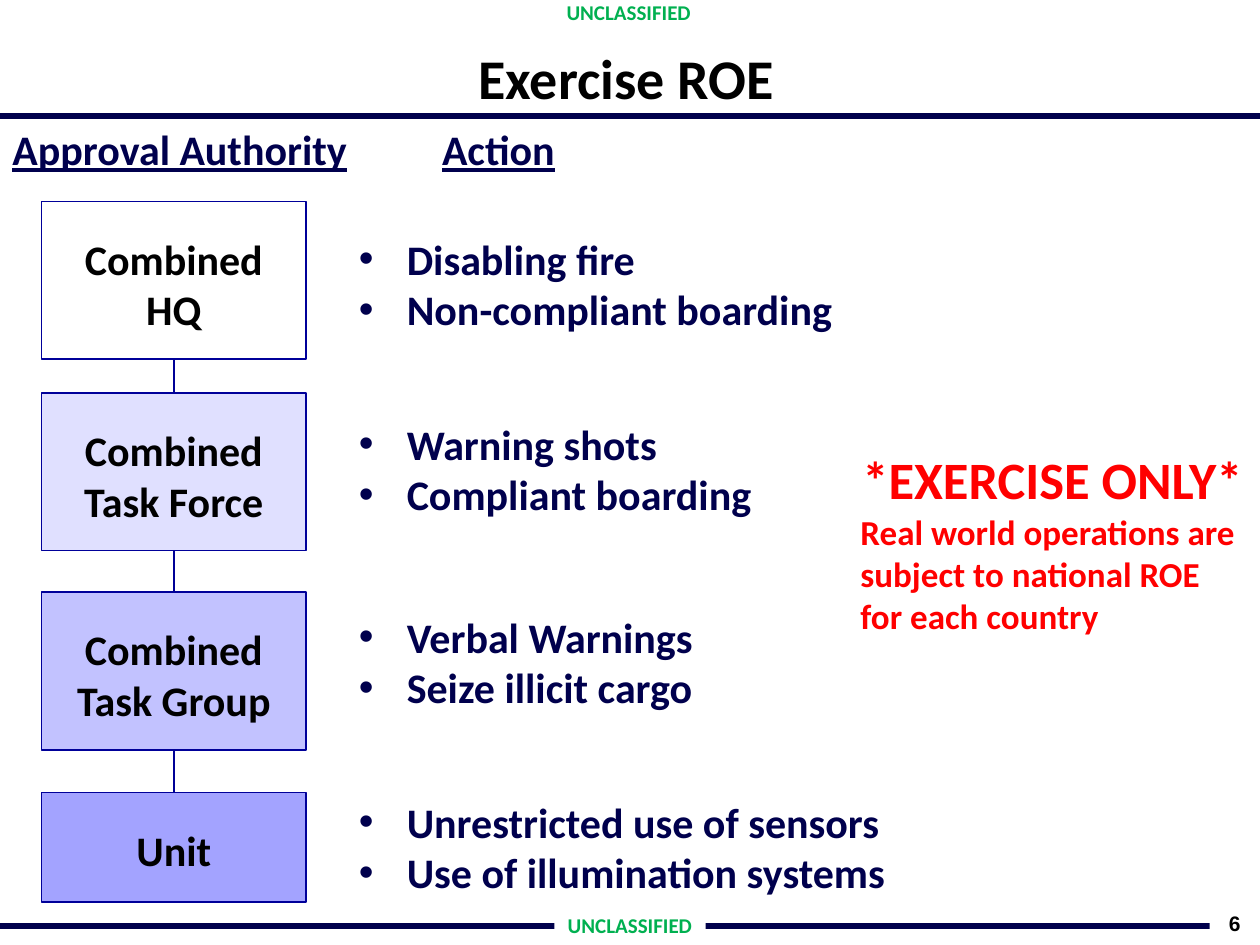
"""Build the Exercise ROE slide: approval levels, their actions and a caution."""
from itertools import pairwise
from lxml import etree
from pptx import Presentation, util as u
from pptx.dml.color import RGBColor
from pptx.enum import shapes, text
from pptx.oxml.ns import qn

THEME = {
    "navy": "00004C", "ink": "00004D", "edge": "000099", "link": "000096",
    "black": "000000", "white": "FFFFFF", "red": "FF0000", "green": "00B050",
    "font": "Calibri", "title": 32, "alert": 30, "body": 24, "note": 20, "small": 12,
}
MID, LEFT = text.PP_ALIGN.CENTER, text.PP_ALIGN.LEFT
TOP, BASE = text.MSO_ANCHOR.TOP, text.MSO_ANCHOR.BOTTOM


def write(para, words, size, color, align=LEFT, **extra):
    para.alignment = align
    run = para.add_run()
    run.text = words
    form = {"name": THEME["font"], "size": u.Pt(THEME[size]), "bold": True} | extra
    for key, val in form.items():
        setattr(run.font, key, val)
    run.font.color.rgb = RGBColor.from_string(THEME[color])


def rule(start, end, color, width):
    line = slide.shapes.add_connector(
        shapes.MSO_CONNECTOR.STRAIGHT, *map(u.Inches, start + end))
    line.line.color.rgb = RGBColor.from_string(THEME[color])
    line.line.width = u.Pt(width)
    etree.SubElement(line._element.spPr, qn("a:effectLst"))
    return line


deck = Presentation()
deck.slide_width, deck.slide_height = u.Inches(10), u.Inches(7.5)
slide = deck.slides.add_slide(deck.slide_layouts[6])

for y in (7.35, 0.92):
    rule((0, y), (10, y), "navy", 3)

title = slide.shapes.add_textbox(*map(u.Inches, (-0.03, 0, 10, 0.93))).text_frame
title.word_wrap, title.vertical_anchor = True, BASE
write(title.paragraphs[0], "Exercise ROE", "title", "black", MID)

alert = slide.shapes.add_textbox(*map(u.Inches, (6.73, 3.5, 3.25, 1.62))).text_frame
alert.word_wrap = True
write(alert.paragraphs[0], "*EXERCISE ONLY*", "alert", "red", MID)
write(alert.add_paragraph(),
      "Real world operations are subject to national ROE for each country", "note", "red")

marks = [
    ((9.6, 7.15, 0.4, 0.35), "6", "black", "Arial"),
    ((4.4, 7.24, 1.2, 0.2), "UNCLASSIFIED", "green", "Calibri"),
    ((4.39, 0, 1.2, 0.2), "UNCLASSIFIED", "green", "Calibri"),
]
for place, words, color, font in marks:
    mark = slide.shapes.add_shape(shapes.MSO_SHAPE.RECTANGLE, *map(u.Inches, place))
    mark.shadow.inherit = False
    mark.fill.solid()
    mark.fill.fore_color.rgb = RGBColor.from_string(THEME["white"])
    mark.line.fill.background()
    frame = mark.text_frame
    form = {"word_wrap": False, "margin_top": 0, "margin_bottom": 0,
            "vertical_anchor": text.MSO_ANCHOR.MIDDLE}
    for key, val in form.items():
        setattr(frame, key, val)
    write(frame.paragraphs[0], words, "small", color, MID, name=font)

levels = [
    ("Combined HQ", 1.6, 1.25, None, 1.8, ("Disabling fire", "Non-compliant boarding")),
    ("Combined Task Force", 3.12, 1.25, "E0E0FF", 3.27, ("Warning shots", "Compliant boarding")),
    ("Combined Task Group", 4.7, 1.25, "C2C2FF", 4.8, ("Verbal Warnings", "Seize illicit cargo")),
    ("Unit", 6.29, 0.87, "A3A3FF", 6.27,
     ("Unrestricted use of sensors", "Use of illumination systems")),
]
boxes = []
for name, top, high, fill, list_top, acts in levels:
    box = slide.shapes.add_shape(
        shapes.MSO_SHAPE.RECTANGLE, *map(u.Inches, (0.33, top, 2.1, high)))
    box.shadow.inherit = False
    if fill:
        box.fill.solid()
        box.fill.fore_color.rgb = RGBColor.from_string(fill)
    else:
        box.fill.background()
    box.line.color.rgb = RGBColor.from_string(THEME["edge"])
    box.line.width = u.Pt(1)
    frame = box.text_frame
    form = {"word_wrap": True, "vertical_anchor": TOP, "margin_top": u.Inches(0.25)}
    for key, val in form.items():
        setattr(frame, key, val)
    write(frame.paragraphs[0], name, "body", "black", MID)
    boxes.append(box)

    frame = slide.shapes.add_textbox(
        *map(u.Inches, (2.75, list_top, 4.65, 0.91))).text_frame
    frame.word_wrap = True
    for i, act in enumerate(acts):
        para = frame.add_paragraph() if i else frame.paragraphs[0]
        props = para._p.get_or_add_pPr()
        props.set("marL", str(u.Inches(0.38)))
        props.set("indent", str(-u.Inches(0.38)))
        etree.SubElement(props, qn("a:buFont"), typeface="Arial")
        etree.SubElement(props, qn("a:buChar"), char="•")
        write(para, act, "body", "ink")

for upper, lower in pairwise(boxes):
    link = rule((0, 0), (0, 0), "link", 0.75)
    link.begin_connect(upper, 2)
    link.end_connect(lower, 0)

head = slide.shapes.add_textbox(*map(u.Inches, (0, 0.93, 7.09, 0.5))).text_frame
head.word_wrap = True
para = head.paragraphs[0]
tabs = etree.SubElement(para._p.get_or_add_pPr(), qn("a:tabLst"))
etree.SubElement(tabs, qn("a:tab"), pos=str(u.Inches(3.41)), algn="l")
for words, under in (("Approval Authority", True), ("\t", False), ("Action", True)):
    write(para, words, "body", "ink", underline=under)

deck.save("out.pptx")
